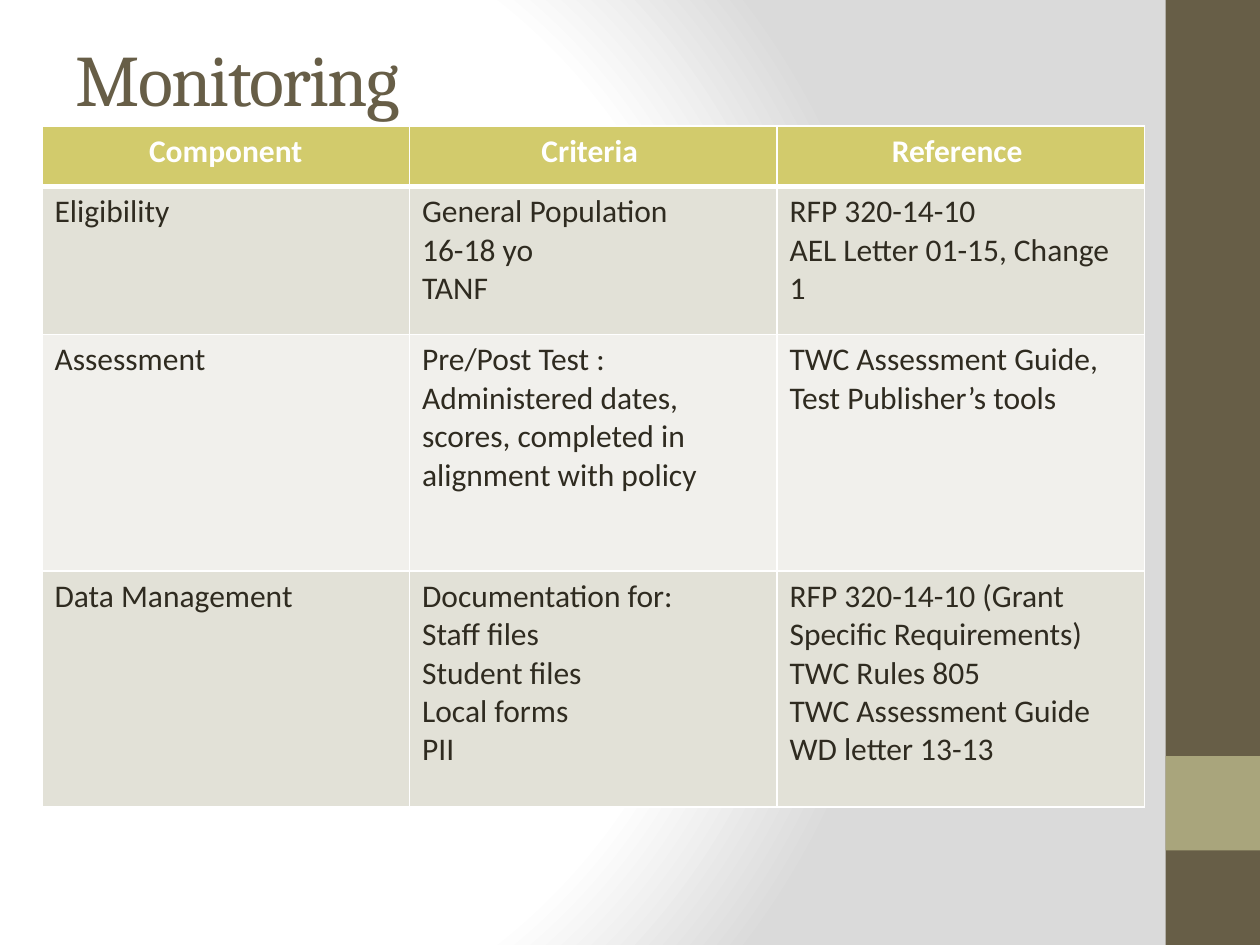
from lxml import etree
from pptx import Presentation
from pptx.dml.color import RGBColor
from pptx.enum.shapes import MSO_SHAPE
from pptx.enum.text import MSO_ANCHOR, MSO_AUTO_SIZE, PP_ALIGN
from pptx.oxml import parse_xml
from pptx.oxml.ns import nsdecls, qn
from pptx.util import Emu, Pt

RECT = MSO_SHAPE.RECTANGLE
MIDDLE = MSO_ANCHOR.MIDDLE
NO_AUTOFIT = MSO_AUTO_SIZE.NONE
LEFT, CENTER = PP_ALIGN.LEFT, PP_ALIGN.CENTER

EMU_PER_PX = 9525
TITLE_FONT, BODY_FONT = "Cambria", "Calibri"
TITLE_ONLY = 5
COLORS = {
    "white": "FFFFFF", "grey": "DADADA", "brown": "675E47",
    "olive": "A9A57C", "header": "D2CB6C", "text": "2F2B20",
    "dark_band": "E2E1D7", "light_band": "F1F0EC",
}
ROW_HEIGHTS = [46, 113, 180, 180]
ROWS = [
    ["Component", "Criteria ", "Reference "],
    ["Eligibility",
     "General Population\n16-18 yo\nTANF",
     "RFP 320-14-10\nAEL Letter 01-15, Change 1"],
    ["Assessment",
     "Pre/Post Test : Administered dates, scores, completed in "
     "alignment with policy",
     "TWC Assessment Guide, Test Publisher’s tools"],
    ["Data Management",
     "Documentation for:\nStaff files\nStudent files\nLocal forms\nPII",
     "RFP 320-14-10 (Grant Specific Requirements)\nTWC Rules 805\n"
     "TWC Assessment Guide\nWD letter 13-13"],
]


def px(n):
    return Emu(n * EMU_PER_PX)


def color(name):
    return RGBColor.from_string(COLORS[name])


def style_run(r, font, size, color_name, bold=False):
    r.font.name = font
    r.font.size = Pt(size)
    r.font.bold = bold
    r.font.color.rgb = color(color_name)


def set_background(slide):
    """Fill the background with a radial gradient centred on the left."""
    stops = "".join(
        f'<a:gs pos="{pos * 1000}"><a:srgbClr val="{COLORS[name]}"/></a:gs>'
        for pos, name in [(0, "white"), (75, "white"), (100, "grey")])
    bg = parse_xml(
        f'<p:bg {nsdecls("p", "a")}><p:bgPr><a:gradFill rotWithShape="1">'
        f'<a:gsLst>{stops}</a:gsLst><a:path path="circle">'
        '<a:fillToRect l="20000" t="50000" r="100000" b="50000"/></a:path>'
        '</a:gradFill><a:effectLst/></p:bgPr></p:bg>')
    slide.element.cSld.insert(0, bg)


def add_sidebar(slide, x, y, w, h):
    """Add a brown strip with an olive square one square above its foot."""
    bars = [("brown", y, h), ("olive", y + h - 2 * w, w)]
    for name, top, height in bars:
        sp = slide.shapes.add_shape(RECT, px(x), px(top), px(w), px(height))
        sp.shadow.inherit = False
        sp.fill.solid()
        sp.fill.fore_color.rgb = color(name)
        sp.line.fill.background()


def add_title(slide, text, x, y, w, h):
    title = slide.shapes.title
    title.left, title.top, title.width, title.height = map(px, (x, y, w, h))
    tf = title.text_frame
    tf.text = text
    tf.auto_size = NO_AUTOFIT
    tf.vertical_anchor = MIDDLE
    p = tf.paragraphs[0]
    p.alignment = LEFT
    r = p.runs[0]
    style_run(r, TITLE_FONT, 41.4, "brown")
    r.font._element.set("spc", "-100")


def set_borders(cell, bottom_width):
    widths = {"a:lnL": 1, "a:lnR": 1, "a:lnT": 1, "a:lnB": bottom_width}
    tc_pr = cell._tc.get_or_add_tcPr()
    for i, (tag, width) in enumerate(widths.items()):
        ln = etree.Element(qn(tag), w=str(Pt(width)))
        fill = etree.SubElement(ln, qn("a:solidFill"))
        etree.SubElement(fill, qn("a:srgbClr"), val=COLORS["white"])
        tc_pr.insert(i, ln)


def fill_cell(cell, text, is_header, band):
    cell.fill.solid()
    cell.fill.fore_color.rgb = color(band)
    set_borders(cell, 3 if is_header else 1)
    cell.text_frame.text = text
    for p in cell.text_frame.paragraphs:
        p.alignment = CENTER if is_header else LEFT
        for r in p.runs:
            style_run(r, BODY_FONT, 18, "white" if is_header else "text",
                      is_header)


def add_monitoring_table(slide, x, y, w):
    columns = len(ROWS[0])
    frame = slide.shapes.add_table(len(ROWS), columns, px(x), px(y), px(w),
                                   px(sum(ROW_HEIGHTS)))
    table = frame.table
    for column in table.columns:
        column.width = px(w // columns)
    for i, (row, height) in enumerate(zip(ROWS, ROW_HEIGHTS)):
        table.rows[i].height = px(height)
        band = "header" if i == 0 else "dark_band" if i % 2 else "light_band"
        for j, text in enumerate(row):
            fill_cell(table.cell(i, j), text, i == 0, band)


def main():
    prs = Presentation()
    prs.slide_width, prs.slide_height = px(960), px(720)
    slide = prs.slides.add_slide(prs.slide_layouts[TITLE_ONLY])
    set_background(slide)
    add_sidebar(slide, 888, 0, 72, 720)
    add_monitoring_table(slide, 32, 96, 840)
    add_title(slide, "Monitoring", 48, 29, 864, 60)
    prs.save("out.pptx")


if __name__ == "__main__":
    main()
